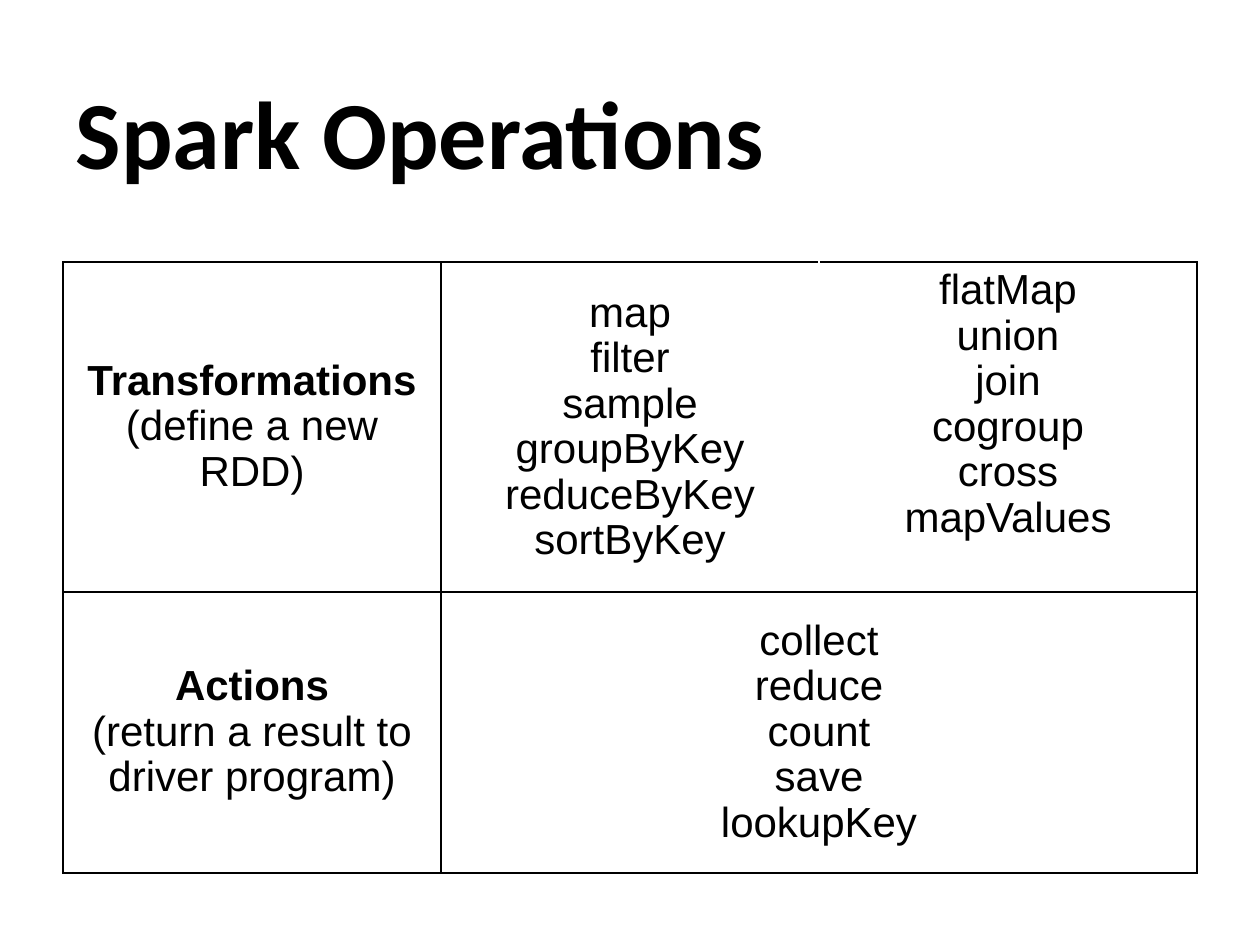
import pptx
import pptx.dml.color
import pptx.enum.text
import pptx.oxml
import pptx.util

Pt = pptx.util.Pt
ANCHOR = pptx.enum.text.MSO_ANCHOR
ALIGN = pptx.enum.text.PP_ALIGN
BLACK, WHITE = "000000", "FFFFFF"

TITLE = "Spark Operations"
HEADINGS = [
    ("Transformations", "(define a new RDD)"),
    ("Actions", "(return a result to driver program)"),
]
OPERATIONS = {
    (0, 1): ["map", "filter", "sample", "groupByKey", "reduceByKey", "sortByKey"],
    (0, 2): ["flatMap", "union", "join", "cogroup", "cross\nmapValues"],
    (1, 1): ["collect", "reduce", "count\nsave", "lookupKey"],
}
WHITE_SIDES = {(0, 1): "R", (0, 2): "L"}
ROW_HEIGHTS = [188.6, 160.6]
COLUMN_WIDTH = 216
LEFT, TABLE_TOP, WIDTH = 36, 149.8, 648


def colour(value):
    return pptx.dml.color.RGBColor.from_string(value)


def add_text(para, text, font, size, bold):
    for number, line in enumerate(text.split("\n")):
        if number:
            para.add_line_break()
        span = para.add_run()
        span.text = line
        span.font.name, span.font.size, span.font.bold = font, Pt(size), bold
        span.font.color.rgb = colour(BLACK)


def fill_cell(cell, lines, headed, anchor):
    cell.vertical_anchor = anchor
    frame = cell.text_frame
    for number, line in enumerate(lines):
        para = frame.add_paragraph() if number else frame.paragraphs[0]
        para.alignment = ALIGN.CENTER
        para.line_spacing = 0.97
        add_text(para, line, "Arial", 24, headed and number == 0)


def style_cell(cell, white_side):
    properties = cell._tc.get_or_add_tcPr()
    for side in "LRTB":
        value = WHITE if side == white_side else BLACK
        properties.append(pptx.oxml.parse_xml(
            f'<a:ln{side} xmlns:a="http://schemas.openxmlformats.org/drawingml/2006/main" w="12700">'
            f'<a:solidFill><a:srgbClr val="{value}"/></a:solidFill></a:ln{side}>'))
    cell.fill.background()


def main():
    """Build the slide listing Spark transformations and actions."""
    deck = pptx.Presentation()
    deck.slide_width, deck.slide_height = Pt(720), Pt(540)
    page = deck.slides.add_slide(deck.slide_layouts[5])

    title = page.shapes.title
    title.left, title.top, title.width, title.height = Pt(LEFT), Pt(30), Pt(WIDTH), Pt(90)
    title.text_frame.vertical_anchor = ANCHOR.MIDDLE
    heading = title.text_frame.paragraphs[0]
    heading.alignment = ALIGN.LEFT
    add_text(heading, TITLE, "Calibri", 55, True)

    table = page.shapes.add_table(
        len(ROW_HEIGHTS), 3, Pt(LEFT), Pt(TABLE_TOP), Pt(WIDTH), Pt(sum(ROW_HEIGHTS))).table
    table.first_row = table.horz_banding = False
    for column in table.columns:
        column.width = Pt(COLUMN_WIDTH)
    for row, height in zip(table.rows, ROW_HEIGHTS):
        row.height = Pt(height)
    table.cell(1, 1).merge(table.cell(1, 2))

    for row, lines in enumerate(HEADINGS):
        fill_cell(table.cell(row, 0), lines, True, ANCHOR.MIDDLE)
    for place, lines in OPERATIONS.items():
        anchor = ANCHOR.TOP if place == (0, 2) else ANCHOR.MIDDLE
        fill_cell(table.cell(*place), lines, False, anchor)
    for row in range(len(ROW_HEIGHTS)):
        for column in range(3):
            style_cell(table.cell(row, column), WHITE_SIDES.get((row, column)))

    deck.save("out.pptx")


if __name__ == "__main__":
    main()
